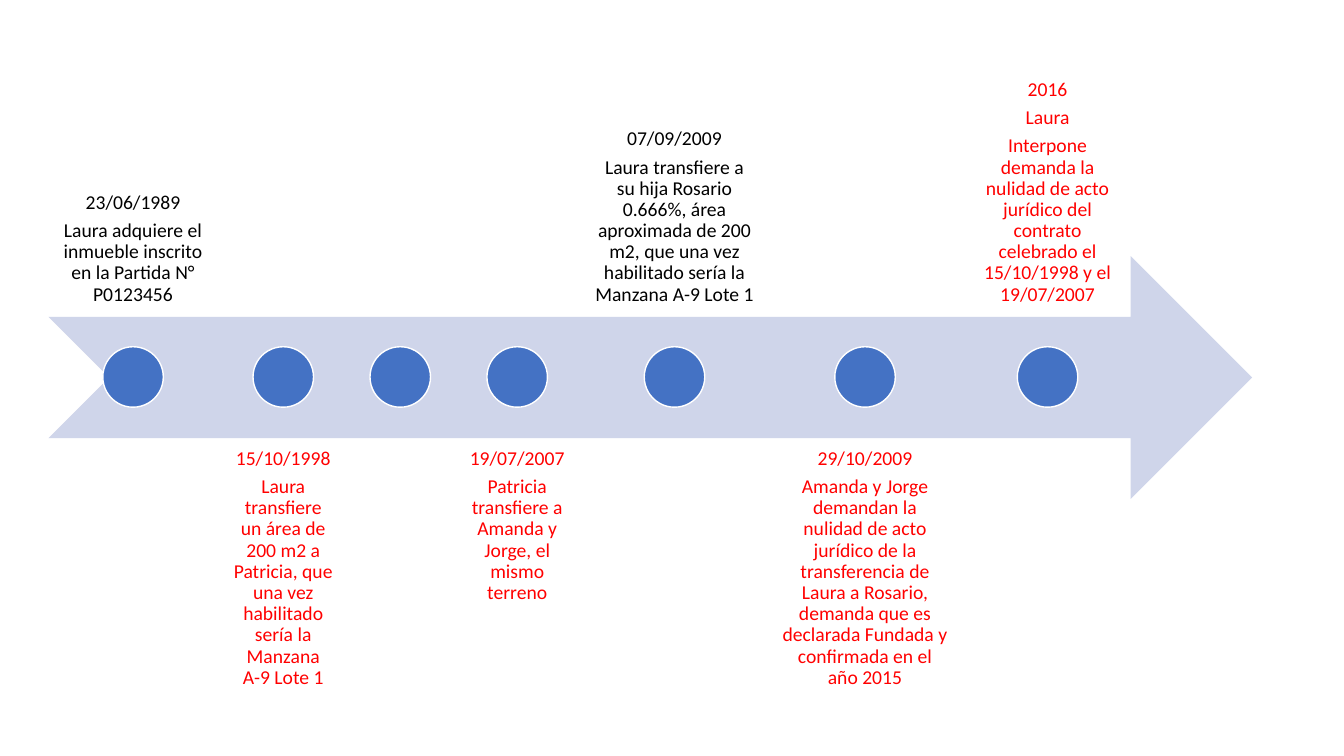
"""Build a timeline slide of property transfers and lawsuits."""
from pptx import Presentation
from pptx.dml.color import RGBColor
from pptx.enum.shapes import MSO_SHAPE
from pptx.enum.text import MSO_ANCHOR, PP_ALIGN
from pptx.util import Inches, Pt

ARROW, CIRCLE = MSO_SHAPE.NOTCHED_RIGHT_ARROW, MSO_SHAPE.OVAL
TOP, BOTTOM = MSO_ANCHOR.TOP, MSO_ANCHOR.BOTTOM
CENTER = PP_ALIGN.CENTER
COLORS = {"arrow": "CFD5EA", "marker": "4472C4", "outline": "FFFFFF",
          "black": "000000", "red": "FF0000"}
BAND_HEIGHT = 2.41
ABOVE_TOP, BELOW_TOP = 0.73, 4.34
MARKER_TOP, MARKER_SIZE = 3.44, 0.6

EVENTS = [
    (1.32, 1.66, ABOVE_TOP, "black",
     ["23/06/1989", "Laura adquiere el inmueble inscrito en la Partida N° P0123456"]),
    (2.81, 1.23, BELOW_TOP, "red",
     ["15/10/1998", "Laura transfiere un área de 200 m2 a Patricia, que una vez "
      "habilitado sería la Manzana A-9 Lote 1"]),
    (3.97, 0, BELOW_TOP, "red", []),
    (5.13, 1.22, BELOW_TOP, "red",
     ["19/07/2007", "Patricia transfiere a Amanda y Jorge, el mismo terreno"]),
    (6.69, 1.81, ABOVE_TOP, "black",
     ["07/09/2009", "Laura transfiere a su hija Rosario 0.666%, área aproximada de "
      "200 m2, que una vez habilitado sería la Manzana A-9 Lote 1"]),
    (8.58, 1.87, BELOW_TOP, "red",
     ["29/10/2009", "Amanda y Jorge demandan la nulidad de acto jurídico de la "
      "transferencia de Laura a Rosario, demanda que es declarada Fundada y "
      "confirmada en el año 2015"]),
    (10.39, 1.65, ABOVE_TOP, "red",
     ["2016", "Laura", "Interpone demanda la nulidad de acto jurídico del contrato "
      "celebrado el 15/10/1998 y el 19/07/2007"]),
]


def add_filled(kind, left, top, width, height, color):
    shape = slide.shapes.add_shape(
        kind, Inches(left), Inches(top), Inches(width), Inches(height))
    shape.shadow.inherit = False
    shape.fill.solid()
    shape.fill.fore_color.rgb = RGBColor.from_string(COLORS[color])
    return shape


prs = Presentation()
prs.slide_width, prs.slide_height = Inches(13.33), Inches(7.5)
slide = prs.slides.add_slide(prs.slide_layouts[6])

timeline = add_filled(ARROW, 0.48, 2.54, 11.94, BAND_HEIGHT, "arrow")
timeline.line.fill.background()

for center, width, top, color, lines in EVENTS:
    marker = add_filled(CIRCLE, center - MARKER_SIZE / 2, MARKER_TOP,
                        MARKER_SIZE, MARKER_SIZE, "marker")
    marker.line.color.rgb = RGBColor.from_string(COLORS["outline"])
    marker.line.width = Pt(1)
    if not lines:
        continue
    event = slide.shapes.add_textbox(
        Inches(center - width / 2), Inches(top), Inches(width), Inches(BAND_HEIGHT))
    frame = event.text_frame
    frame.word_wrap = True
    frame.vertical_anchor = BOTTOM if top == ABOVE_TOP else TOP
    frame.margin_left = frame.margin_right = Inches(0.11)
    frame.margin_top = frame.margin_bottom = Inches(0.11)
    frame.text = "\n".join(lines)
    for paragraph in frame.paragraphs:
        paragraph.alignment = CENTER
        paragraph.line_spacing = 0.9
        paragraph.space_after = Pt(4.9)
        font = paragraph.runs[0].font
        font.name, font.size = "Calibri", Pt(14)
        font.color.rgb = RGBColor.from_string(COLORS[color])

prs.save("out.pptx")
